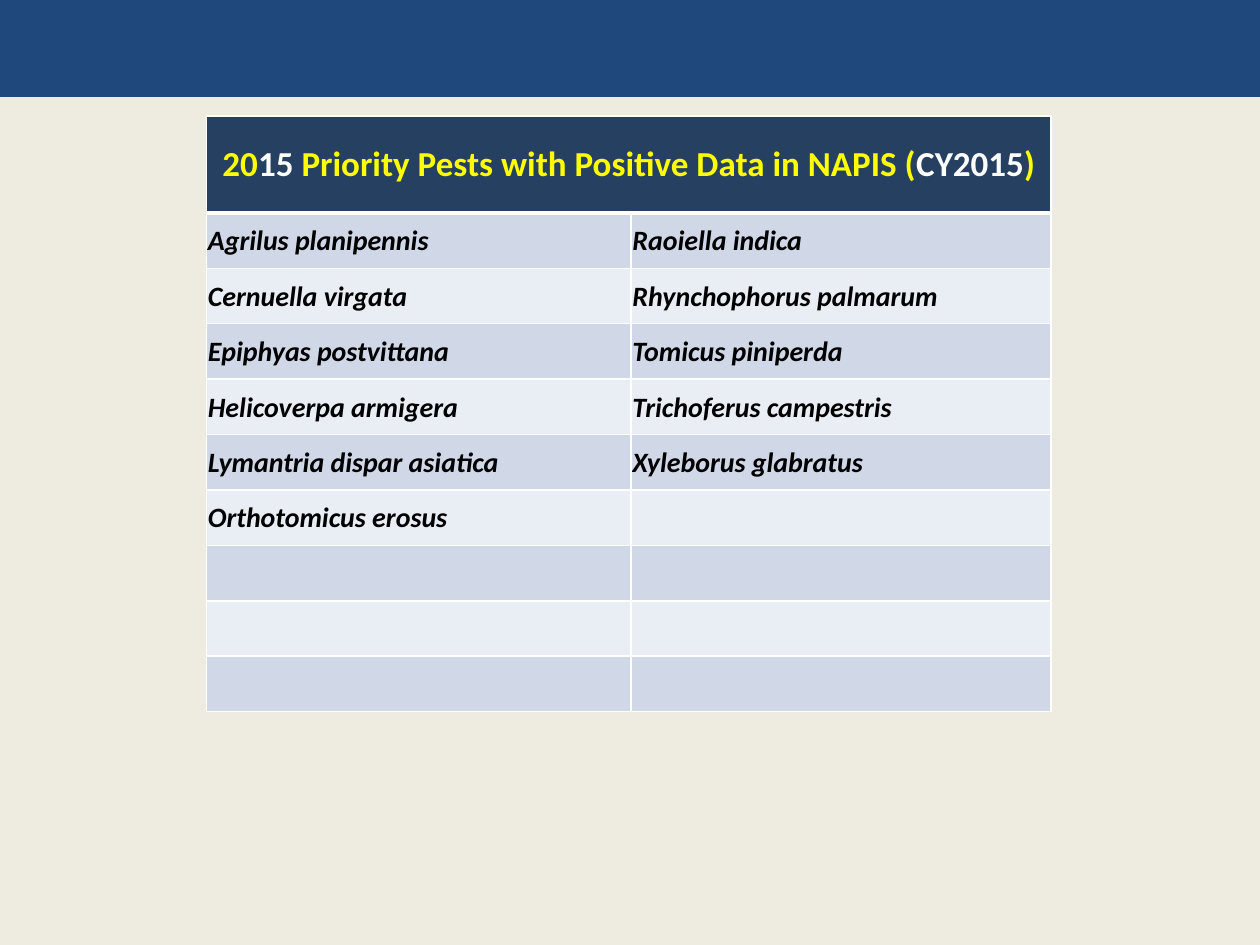
"""Build a slide with a table of priority pests that have positive data in NAPIS."""
from lxml import etree
from pptx import Presentation
from pptx import util as u
from pptx.dml.color import RGBColor
from pptx.enum import shapes, text
from pptx.oxml.ns import qn

NAVY = RGBColor(0x1F, 0x49, 0x7D)
HEADER_BLUE = RGBColor(0x25, 0x40, 0x61)
BANDS = (RGBColor(0xD0, 0xD8, 0xE8), RGBColor(0xE9, 0xED, 0xF4))
CREAM = RGBColor(0xEE, 0xEC, 0xE1)
YELLOW = RGBColor(0xFF, 0xFF, 0x00)
WHITE = RGBColor(0xFF, 0xFF, 0xFF)
BLACK = RGBColor(0x00, 0x00, 0x00)

HEADING = [
    ("20", YELLOW),
    ("15", WHITE),
    (" Priority Pests with Positive Data in NAPIS (", YELLOW),
    ("CY2015", WHITE),
    (")", YELLOW),
]
PESTS = [
    ("Agrilus planipennis", "Raoiella indica"),
    ("Cernuella virgata", "Rhynchophorus palmarum"),
    ("Epiphyas postvittana", "Tomicus piniperda"),
    ("Helicoverpa armigera", "Trichoferus campestris"),
    ("Lymantria dispar asiatica", "Xyleborus glabratus"),
    ("Orthotomicus erosus", ""),
    ("", ""),
    ("", ""),
    ("", ""),
]
COLUMN_WIDTHS = (3.37, 3.33)
HEADER_HEIGHT, ROW_HEIGHT = 0.77, 0.44


def add_span(para, words, size=16, color=BLACK, italic=False):
    span = para.add_run()
    span.text = words
    span.font.name = "Calibri"
    span.font.size = u.Pt(size)
    span.font.bold = True
    span.font.italic = italic
    span.font.color.rgb = color


def style_cell(cell, fill, bottom=1):
    cell.vertical_anchor = text.MSO_ANCHOR.MIDDLE
    properties = cell._tc.get_or_add_tcPr()
    for side, width in (("L", 1), ("R", 1), ("T", 1), ("B", bottom)):
        line = etree.SubElement(properties, qn(f"a:ln{side}"), w=str(u.Pt(width)))
        solid = etree.SubElement(line, qn("a:solidFill"))
        etree.SubElement(solid, qn("a:srgbClr"), val=str(WHITE))
    cell.fill.solid()
    cell.fill.fore_color.rgb = fill


def add_banner(page, width):
    banner = page.shapes.add_shape(
        shapes.MSO_SHAPE.RECTANGLE, 0, 0, width, u.Inches(0.77))
    banner.shadow.inherit = False
    banner.fill.solid()
    banner.fill.fore_color.rgb = NAVY
    banner.line.fill.background()


def add_pest_table(page):
    height = HEADER_HEIGHT + ROW_HEIGHT * len(PESTS)
    table = page.shapes.add_table(
        len(PESTS) + 1, len(COLUMN_WIDTHS), u.Inches(1.64), u.Inches(0.92),
        u.Inches(sum(COLUMN_WIDTHS)), u.Inches(height)).table
    for column, width in zip(table.columns, COLUMN_WIDTHS):
        column.width = u.Inches(width)
    for index, row in enumerate(table.rows):
        row.height = u.Inches(ROW_HEIGHT if index else HEADER_HEIGHT)

    for cell in table.rows[0].cells:
        style_cell(cell, HEADER_BLUE, bottom=3)
    header = table.cell(0, 0)
    header.merge(table.cell(0, 1))
    para = header.text_frame.paragraphs[0]
    para.alignment = text.PP_ALIGN.CENTER
    for words, color in HEADING:
        add_span(para, words, size=20, color=color)

    for index, names in enumerate(PESTS):
        for cell, name in zip(table.rows[index + 1].cells, names):
            style_cell(cell, BANDS[index % 2], bottom=1)
            if name:
                cell.margin_left = cell.margin_right = cell.margin_top = u.Inches(0.01)
                cell.margin_bottom = 0
                add_span(cell.text_frame.paragraphs[0], name, italic=True)
    for cell in table.rows[1].cells:
        top = cell._tc.tcPr.find(qn("a:lnT"))
        top.set("w", str(u.Pt(3)))


def main():
    deck = Presentation()
    deck.slide_width, deck.slide_height = u.Inches(10), u.Inches(7.5)
    page = deck.slides.add_slide(deck.slide_layouts[6])
    page.background.fill.solid()
    page.background.fill.fore_color.rgb = CREAM
    add_banner(page, deck.slide_width)
    add_pest_table(page)
    deck.save("out.pptx")


if __name__ == "__main__":
    main()
